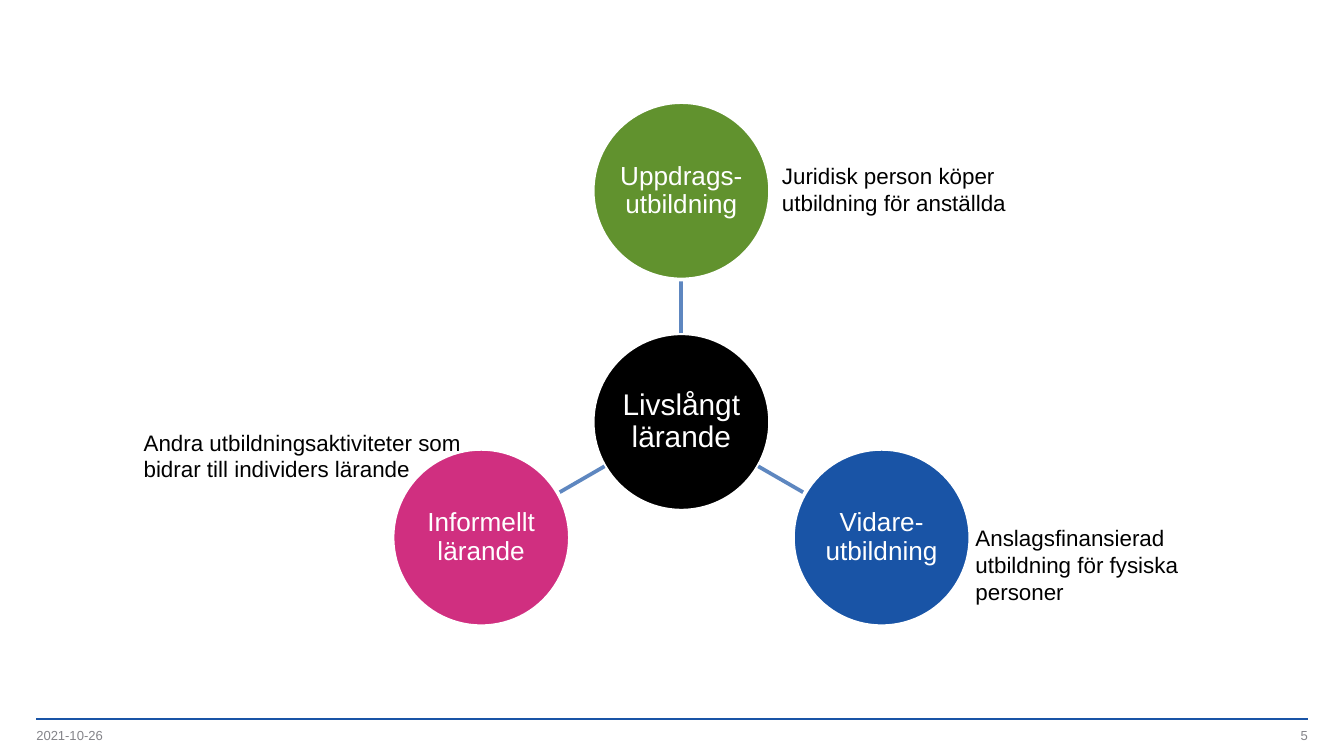
from dataclasses import dataclass
from math import cos, radians, sin

from lxml import etree
from pptx import Presentation
from pptx.dml.color import RGBColor
from pptx.enum import shapes, text
from pptx.oxml import ns
from pptx.util import Inches, Pt


@dataclass(frozen=True)
class Theme:
    font: str = "Arial"
    white: str = "FFFFFF"
    black: str = "000000"
    blue: str = "1954A6"
    green: str = "61922E"
    pink: str = "D02F80"
    spoke: str = "5E87C0"
    grey: str = "848489"
    hub_size: int = 16
    node_size: int = 14
    label_size: int = 12
    footer_size: int = 7


THEME = Theme()

# angle in degrees, name, colour, label, label offset and size within the diagram
BRANCHES = [
    (-90, "Uppdrags-utbildning", THEME.green,
     "Juridisk person köper utbildning för anställda", (4.75, 0.39, 1.87, 0.5)),
    (30, "Vidare-utbildning", THEME.blue,
     "Anslagsfinansierad utbildning för fysiska personer", (6.19, 3.08, 1.87, 0.71)),
    (150, "Informellt lärande", THEME.pink,
     "Andra utbildningsaktiviteter som bidrar till individers lärande",
     (0, 2.37, 2.79, 0.71)),
]


def write(frame, words, size, color, align=text.PP_ALIGN.LEFT, spacing=None, **frame_format):
    """Fill a text frame with one formatted paragraph."""
    for name, value in frame_format.items():
        setattr(frame, name, value)
    paragraph = frame.paragraphs[0]
    paragraph.text = words
    paragraph.alignment = align
    if spacing:
        paragraph.line_spacing = spacing
    for name, value in {"name": THEME.font, "size": Pt(size)}.items():
        setattr(paragraph.font, name, value)
    paragraph.font.color.rgb = RGBColor.from_string(color)


def margins(inches):
    sides = ("left", "top", "right", "bottom")
    return {f"margin_{side}": Inches(inches) for side in sides}


def add_line(slide, start, end, color, width):
    line = slide.shapes.add_connector(
        shapes.MSO_CONNECTOR.STRAIGHT, *map(Inches, (*start, *end)))
    line.line.color.rgb = RGBColor.from_string(color)
    line.line.width = Pt(width)
    etree.SubElement(line._element.spPr, ns.qn("a:effectLst"))


def add_circle(slide, center, radius, words, size, color):
    left, top = (value - radius for value in center)
    circle = slide.shapes.add_shape(
        shapes.MSO_SHAPE.OVAL, *map(Inches, (left, top, 2 * radius, 2 * radius)))
    circle.shadow.inherit = False
    circle.fill.solid()
    circle.fill.fore_color.rgb = RGBColor.from_string(color)
    circle.line.color.rgb = RGBColor.from_string(THEME.white)
    circle.line.width = Pt(2)
    write(circle.text_frame, words, size, THEME.white, text.PP_ALIGN.CENTER, 0.9,
          word_wrap=True, vertical_anchor=text.MSO_ANCHOR.MIDDLE, **margins(0.01))


def add_radial_diagram(slide, left, top):
    """Draw the hub, its three branches and their labels."""
    radius, distance = 0.66, 1.72
    hub = (left + 4.1, top + 2.37)

    def on_ray(angle, reach):
        turn = radians(angle)
        return hub[0] + reach * cos(turn), hub[1] + reach * sin(turn)

    add_circle(slide, hub, radius, "Livslångt lärande", THEME.hub_size, THEME.black)
    for angle, name, color, _, _ in BRANCHES:
        add_line(slide, on_ray(angle, radius), on_ray(angle, distance - radius),
                 THEME.spoke, 2)
        add_circle(slide, on_ray(angle, distance), radius, name, THEME.node_size, color)
    for _, _, _, label, (x, y, width, height) in BRANCHES:
        box = slide.shapes.add_textbox(
            *map(Inches, (left + x, top + y, width, height)))
        write(box.text_frame, label, THEME.label_size, THEME.black, word_wrap=True)


def add_footer(slide, left, top, width):
    add_line(slide, (left, top), (left + width, top), THEME.blue, 1)
    field = 2.25
    for x, words, align in (
        (left, "2021-10-26", text.PP_ALIGN.LEFT),
        (left + width - field, "5", text.PP_ALIGN.RIGHT),
    ):
        box = slide.shapes.add_textbox(*map(Inches, (x, top + 0.06, field, 0.13)))
        write(box.text_frame, words, THEME.footer_size, THEME.grey, align,
              word_wrap=True, vertical_anchor=text.MSO_ANCHOR.MIDDLE, **margins(0))


def main():
    presentation = Presentation()
    presentation.slide_width = Inches(10)
    presentation.slide_height = presentation.slide_width * 9 // 16
    slide = presentation.slides.add_slide(presentation.slide_layouts[6])
    add_footer(slide, 0.27, 5.35, 9.46)
    add_radial_diagram(slide, 0.97, 0.77)
    presentation.save("out.pptx")


if __name__ == "__main__":
    main()
